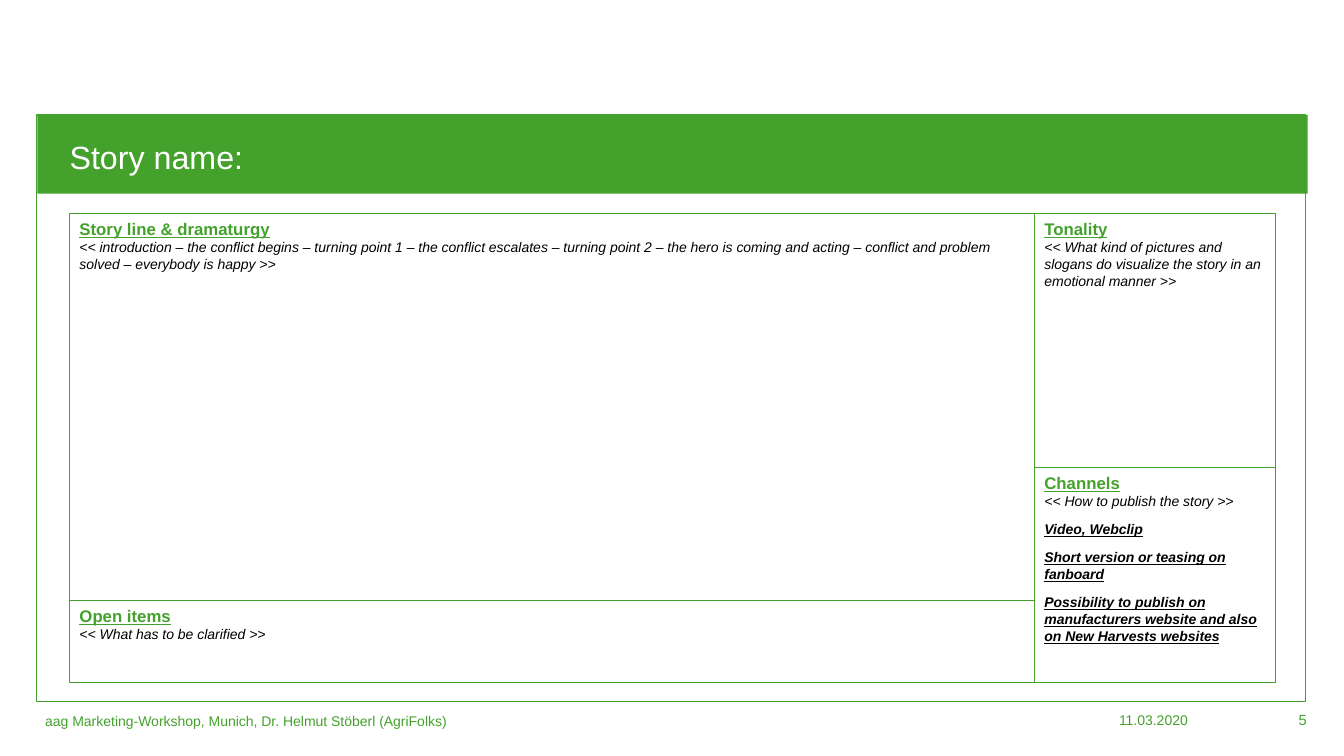
from pptx import Presentation
from pptx.dml.color import RGBColor
from pptx.enum.shapes import MSO_SHAPE
from pptx.enum.text import MSO_ANCHOR, PP_ALIGN
from pptx.util import Inches, Pt

RECTANGLE = MSO_SHAPE.RECTANGLE
TOP, MIDDLE = MSO_ANCHOR.TOP, MSO_ANCHOR.MIDDLE
LEFT, RIGHT = PP_ALIGN.LEFT, PP_ALIGN.RIGHT

WIDTH, HEIGHT = 13.33, 7.5
FONT = "Arial"
COLORS = {"green": "44A12C", "white": "FFFFFF", "black": "000000"}

COLUMNS = (0.69, 10.26, 12.65)
STORY_ROWS = (2.12, 5.96, 6.77)
SIDE_ROWS = (2.12, 4.64, 6.77)

STORY_CELLS = (
    ("Story line & dramaturgy",
     "<< introduction – the conflict begins – turning point 1 – the conflict "
     "escalates – turning point 2 – the hero is coming and acting – conflict "
     "and problem solved – everybody is happy >>", ()),
    ("Open items", "<< What has to be clarified >>", ()),
)
SIDE_CELLS = (
    ("Tonality",
     "<< What kind of pictures and slogans do visualize the story in an "
     "emotional manner >>", ()),
    ("Channels", "<< How to publish the story >>",
     ("Video, Webclip",
      "Short version or teasing on fanboard",
      "Possibility to publish on manufacturers website and also on "
      "New Harvests websites")),
)


def rgb(name):
    """Return the palette colour with this name."""
    return RGBColor.from_string(COLORS[name])


def write(paragraph, text, size=10, color="green", bold=False, italic=False,
          underline=False, align=LEFT):
    """Add a formatted run to a paragraph."""
    paragraph.alignment = align
    run = paragraph.add_run()
    run.text = text
    font = run.font
    font.name, font.size, font.color.rgb = FONT, Pt(size), rgb(color)
    font.bold, font.italic, font.underline = bold, italic, underline


def set_frame(frame, anchor=TOP, inset=(0.1, 0.05), wrap=True):
    """Set anchor, insets and wrapping of a text frame."""
    frame.vertical_anchor, frame.word_wrap = anchor, wrap
    frame.margin_left = frame.margin_right = Inches(inset[0])
    frame.margin_top = frame.margin_bottom = Inches(inset[1])


def add_box(slide, left, top, width, height, fill=None, line=None):
    """Add a flat rectangle with optional fill and outline."""
    box = slide.shapes.add_shape(RECTANGLE, Inches(left), Inches(top),
                                 Inches(width), Inches(height))
    box.shadow.inherit = False
    if fill:
        box.fill.solid()
        box.fill.fore_color.rgb = rgb(fill)
    else:
        box.fill.background()
    if line:
        box.line.color.rgb = rgb(line)
        box.line.width = Pt(1)
    else:
        box.line.fill.background()
    return box


def add_label(slide, text, left, top, width, height, anchor=TOP,
              inset=(0, 0), **style):
    """Add a one-line footer text."""
    label = slide.shapes.add_textbox(Inches(left), Inches(top),
                                     Inches(width), Inches(height))
    set_frame(label.text_frame, anchor, inset)
    write(label.text_frame.paragraphs[0], text, **style)


def add_cell(slide, left, top, right, bottom, heading, prompt, entries):
    """Add a canvas cell with heading, prompt and entries."""
    cell = add_box(slide, left, top, right - left, bottom - top, line="green")
    frame = cell.text_frame
    set_frame(frame)
    intro = frame.paragraphs[0]
    write(intro, heading, size=12, bold=True, underline=True)
    intro.add_line_break()
    write(intro, prompt, color="black", italic=True)
    for entry in entries:
        paragraph = frame.add_paragraph()
        paragraph.space_before = Pt(8)
        write(paragraph, entry, color="black", bold=True, italic=True,
              underline=True)


def add_column(slide, left, right, rows, cells):
    """Stack canvas cells between the given row edges."""
    for top, bottom, content in zip(rows, rows[1:], cells):
        add_cell(slide, left, top, right, bottom, *content)


def place_title(slide, text):
    """Put the title placeholder on top of the green band."""
    title = slide.shapes.title
    title.left, title.top = Inches(COLUMNS[0]), Inches(1.4)
    title.width, title.height = Inches(1.74), Inches(0.35)
    set_frame(title.text_frame, MIDDLE, (0, 0), wrap=False)
    heading = title.text_frame.paragraphs[0]
    heading.line_spacing = 0.9
    write(heading, text, size=23, color="white")
    title.element.getparent().append(title.element)


def main():
    """Build the story canvas slide."""
    deck = Presentation()
    deck.slide_width, deck.slide_height = Inches(WIDTH), Inches(HEIGHT)
    slide = deck.slides.add_slide(deck.slide_layouts[5])

    add_box(slide, 0.36, 1.14, 12.59, 5.82, fill="white", line="green")
    add_box(slide, 0.37, 1.14, 12.6, 0.78, fill="green")
    place_title(slide, "Story name:")

    add_column(slide, COLUMNS[0], COLUMNS[1], STORY_ROWS, STORY_CELLS)
    add_column(slide, COLUMNS[1], COLUMNS[2], SIDE_ROWS, SIDE_CELLS)

    add_label(slide,
              "aag Marketing-Workshop, Munich, Dr. Helmut Stöberl (AgriFolks)",
              0.35, 6.95, 10.01, 0.4, anchor=MIDDLE, inset=(0.1, 0.05))
    add_label(slide, "11.03.2020", 7.94, 7.06, 3.84, 0.17, anchor=MIDDLE,
              align=RIGHT)
    add_label(slide, "5", 11.92, 7.05, 1.04, 0.18, size=10.5, align=RIGHT)
    deck.save("out.pptx")


if __name__ == "__main__":
    main()
